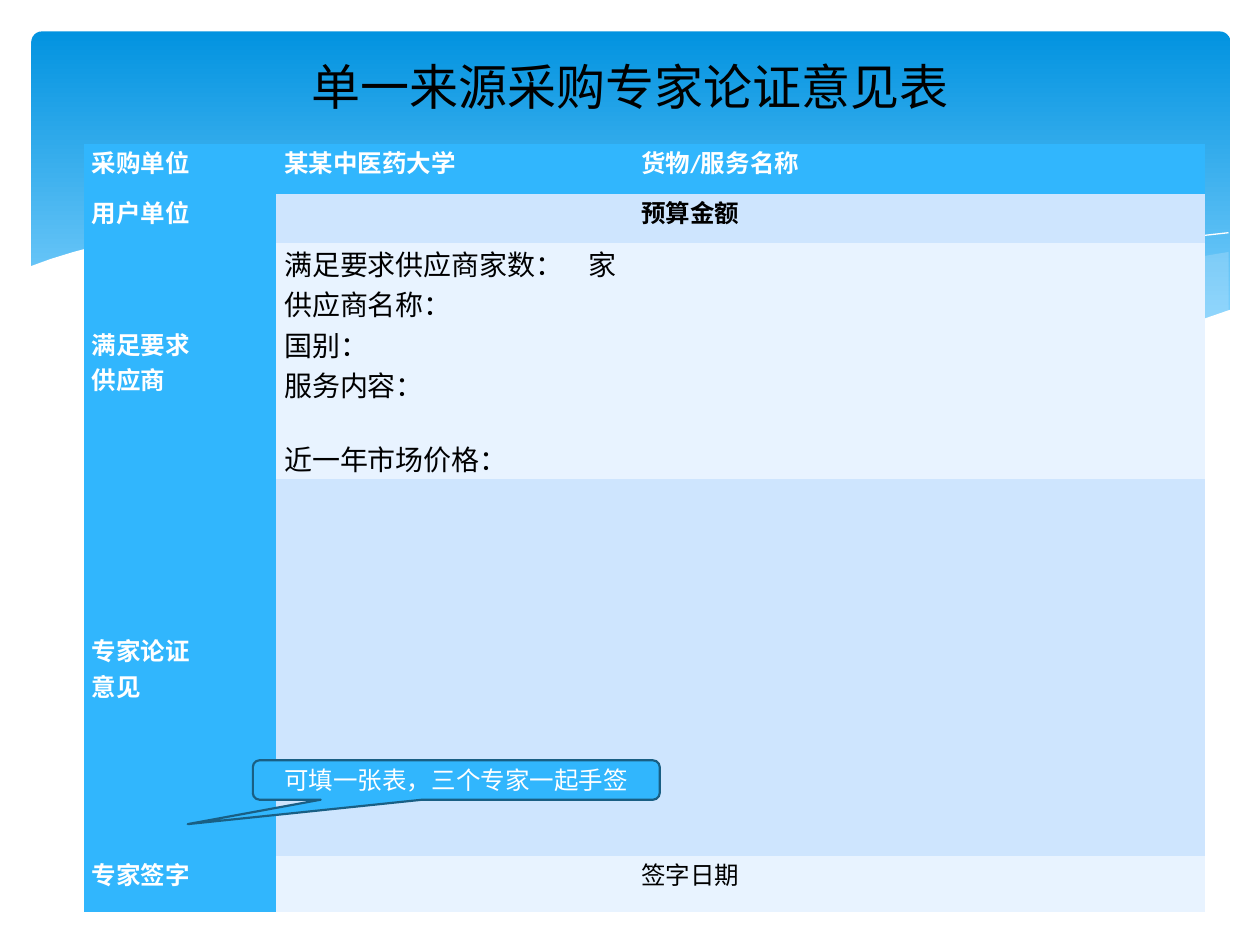
from lxml import etree
from pptx import Presentation
from pptx.dml.color import RGBColor
from pptx.enum.lang import MSO_LANGUAGE_ID
from pptx.enum.shapes import MSO_SHAPE
from pptx.enum.text import MSO_ANCHOR, PP_ALIGN
from pptx.oxml.ns import qn
from pptx.util import Pt

TITLE = "单一来源采购专家论证意见表"
NOTE = "可填一张表，三个专家一起手签"
FORM = [
    [("label", "采购单位"), ("label", "某某中医药大学"), ("label", "货物/服务名称"), ("label", "")],
    [("label", "用户单位"), ("dark", ""), ("dark_bold", "预算金额"), ("dark", "")],
    [("label", "满足要求\n供应商"),
     ("detail", "满足要求供应商家数：\t家\n供应商名称：\n国别：\n服务内容：\n近一年市场价格：")],
    [("label", "专家论证\n意见"), ("dark", "")],
    [("label", "专家签字"), ("light", ""), ("light", "签字日期"), ("light", "")],
]
COLUMNS = [110, 204, 137.5, 189]
ROWS = [29, 28, 135, 215, 32]
MIDDLE_ROWS = (2, 3)
COUNT_TAB = 174
PRICE_GAP = 19

THEME = {
    "sky_top": "0293E0", "sky_bottom": "83D3FE", "mist": "C6E7FC", "white": "FFFFFF",
    "black": "000000", "accent": "31B6FD", "accent_edge": "195F84",
    "band_dark": "CEE5FE", "band_light": "E8F3FF",
    "title_font": "Arial", "body_font": "Calibri",
    "title_size": 28, "detail_size": 16, "body_size": 14,
}
CELL_STYLES = {
    "label": ("accent", "white", "body_size", True),
    "dark": ("band_dark", "black", "body_size", False),
    "dark_bold": ("band_dark", "black", "body_size", True),
    "light": ("band_light", "black", "body_size", False),
    "detail": ("band_light", "black", "detail_size", False),
}

RIGHT_WAVE = [
    (702, 144), (672, 149), (642, 155), (620, 161), (580, 171), (542, 179), (508, 185),
    (476, 191), (508, 195), (536, 198), (562, 200), (586, 200), (609, 199), (634, 196),
    (657, 192), (678, 187), (702, 178)]
LONG_WAVE = [
    (643, 197), (603, 191), (558, 183), (508, 173), (453, 160), (420, 152), (390, 146),
    (361, 141), (335, 138), (302, 135), (274, 133), (248, 134), (225, 135), (206, 138),
    (246, 143), (291, 152), (323, 160), (382, 173), (433, 184), (479, 192), (520, 197),
    (557, 200), (589, 200), (617, 199)]
LONG_CREST = [
    (222, 140), (241, 137), (269, 135), (300, 135), (338, 136), (384, 140), (438, 147),
    (500, 158), (547, 168), (598, 181), (653, 196)]
RIGHT_CREST = [
    (441, 185), (484, 174), (539, 161), (602, 147), (645, 140), (675, 136), (702, 133)]
PAPER = [
    (703, 177), (677, 186), (647, 193), (612, 197.5), (572, 199.5), (536, 198), (495, 193),
    (450, 186), (399, 176), (342, 163), (301, 153), (245, 142), (195, 135), (152, 132),
    (116, 132.5), (86, 135), (61, 139), (42, 143.5), (29, 148), (18, 152.5), (16.5, 153.4),
    (16.5, 237), (703, 237)]
WAVES = [
    (RIGHT_WAVE, "mist", 29),
    (LONG_WAVE, "mist", 40),
    (LONG_CREST, None, None),
    (RIGHT_CREST, None, None),
    (PAPER, "white", 100),
]


def color(name):
    return RGBColor.from_string(THEME[name])


def set_all(target, values):
    for name, value in values.items():
        setattr(target, name, value)


def paint(shape, name):
    shape.fill.solid()
    shape.fill.fore_color.rgb = color(name)


def write(frame, text, align, ink, size, font, bold=False):
    frame.text = text
    for paragraph in frame.paragraphs:
        paragraph.alignment = align
        for run in paragraph.runs:
            set_all(run.font, {"name": THEME[font], "size": Pt(THEME[size]), "bold": bold,
                               "language_id": MSO_LANGUAGE_ID.SIMPLIFIED_CHINESE})
            run.font.color.rgb = color(ink)


def add_sky(slide):
    sky = slide.shapes.add_shape(MSO_SHAPE.ROUNDED_RECTANGLE, Pt(18), Pt(18), Pt(685), Pt(194.5))
    sky.adjustments[0] = 0.03
    sky.shadow.inherit = False
    sky.line.fill.background()
    sky.fill.gradient()
    sky.fill.gradient_angle = 270
    for stop, name, position in zip(sky.fill.gradient_stops, ("sky_top", "sky_bottom"), (0, 0.9)):
        stop.color.rgb = color(name)
        stop.position = position


def add_wave(slide, points, fill, opacity):
    builder = slide.shapes.build_freeform(*points[0], scale=Pt(1))
    builder.add_line_segments(points[1:], close=fill is not None)
    wave = builder.convert_to_shape()
    wave.shadow.inherit = False
    if fill is None:
        wave.fill.background()
        wave.line.color.rgb = color("white")
        wave.line.width = Pt(0)
        return
    wave.line.fill.background()
    paint(wave, fill)
    if opacity < 100:
        tint = wave.element.spPr.find(qn("a:solidFill"))[0]
        etree.SubElement(tint, qn("a:alpha"), val=str(opacity * 1000))


def add_title(slide):
    title = slide.shapes.title
    set_all(title, {"left": Pt(36), "top": Pt(26.5), "width": Pt(648), "height": Pt(45)})
    title.element.getparent().append(title.element)
    set_all(title.text_frame, {"word_wrap": True, "vertical_anchor": MSO_ANCHOR.MIDDLE})
    write(title.text_frame, TITLE, PP_ALIGN.CENTER, "black", "title_size", "title_font")


def add_form(slide):
    holder = slide.shapes.add_table(len(ROWS), len(COLUMNS), Pt(48), Pt(82),
                                    Pt(sum(COLUMNS)), Pt(sum(ROWS)))
    no_grid = "{2D5ABB26-0587-4C30-8999-92F81FD0307C}"
    holder.element.find(".//" + qn("a:tableStyleId")).text = no_grid
    form = holder.table
    for column, width in zip(form.columns, COLUMNS):
        column.width = Pt(width)
    for row, height in zip(form.rows, ROWS):
        row.height = Pt(height)
    for r, entries in enumerate(FORM):
        if len(entries) < len(COLUMNS):
            form.cell(r, 1).merge(form.cell(r, len(COLUMNS) - 1))
        for c, (style, text) in enumerate(entries):
            cell = form.cell(r, c)
            fill, ink, size, bold = CELL_STYLES[style]
            anchor = MSO_ANCHOR.MIDDLE if c == 0 and r in MIDDLE_ROWS else MSO_ANCHOR.TOP
            set_all(cell, {"margin_left": Pt(4.5), "margin_right": Pt(4.5), "margin_top": Pt(0),
                           "margin_bottom": Pt(0), "vertical_anchor": anchor})
            paint(cell, fill)
            write(cell.text_frame, text, PP_ALIGN.JUSTIFY, ink, size, "body_font", bold)
            if style == "detail":
                supplier_count, *_, price = cell.text_frame.paragraphs
                price.space_before = Pt(PRICE_GAP)
                properties = supplier_count._p.get_or_add_pPr()
                tabs = etree.SubElement(properties, qn("a:tabLst"))
                etree.SubElement(tabs, qn("a:tab"), pos=str(Pt(COUNT_TAB)), algn="l")


def add_note(slide):
    note = slide.shapes.add_shape(MSO_SHAPE.ROUNDED_RECTANGULAR_CALLOUT,
                                  Pt(144.5), Pt(434.5), Pt(232.5), Pt(22.5))
    for index, value in enumerate((-0.66, 1.12, 0.17)):
        note.adjustments[index] = value
    note.shadow.inherit = False
    paint(note, "accent")
    note.line.color.rgb = color("accent_edge")
    note.line.width = Pt(1.25)
    set_all(note.text_frame, {"word_wrap": True, "vertical_anchor": MSO_ANCHOR.MIDDLE})
    write(note.text_frame, NOTE, PP_ALIGN.CENTER, "white", "body_size", "body_font")


def main():
    deck = Presentation()
    set_all(deck, {"slide_width": Pt(720), "slide_height": Pt(540)})
    slide = deck.slides.add_slide(deck.slide_layouts[5])
    add_sky(slide)
    for points, fill, opacity in WAVES:
        add_wave(slide, points, fill, opacity)
    add_form(slide)
    add_title(slide)
    add_note(slide)
    deck.save("out.pptx")


if __name__ == "__main__":
    main()
